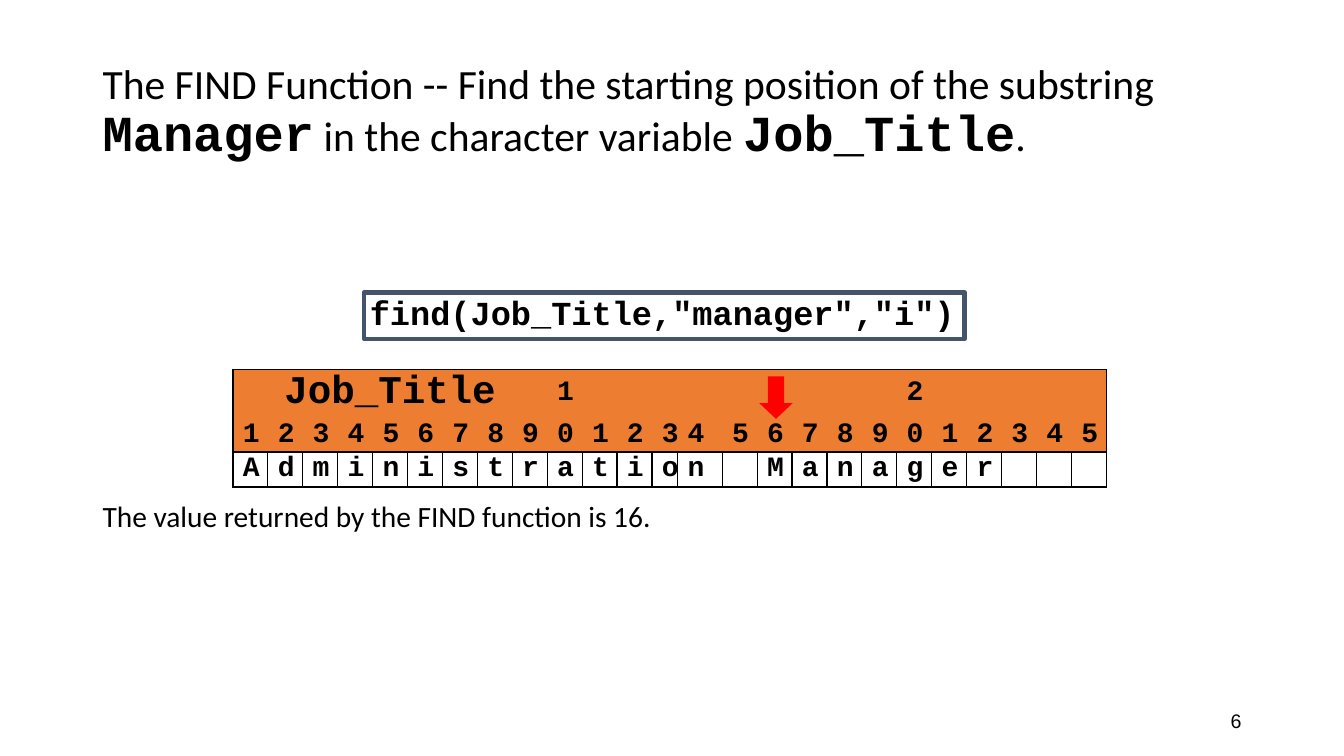
from lxml import etree
from pptx import Presentation
from pptx.dml.color import RGBColor
from pptx.enum.shapes import MSO_SHAPE
from pptx.enum.text import MSO_ANCHOR, MSO_AUTO_SIZE, PP_ALIGN
from pptx.oxml.ns import qn
from pptx.util import Cm, Pt

LEFT, CENTER, RIGHT = PP_ALIGN.LEFT, PP_ALIGN.CENTER, PP_ALIGN.RIGHT
TOP, MIDDLE = MSO_ANCHOR.TOP, MSO_ANCHOR.MIDDLE
NO_FIT, GROW = MSO_AUTO_SIZE.NONE, MSO_AUTO_SIZE.SHAPE_TO_FIT_TEXT
RECTANGLE, ARROW = MSO_SHAPE.RECTANGLE, MSO_SHAPE.RIGHT_ARROW

COLORS = {"ink": "000000", "paper": "FFFFFF", "header": "ED7D31",
          "frame": "44546A", "pointer": "FF0000"}
PROSE = {"name": "Calibri", "bold": False}
CODE = {"name": "Courier New", "bold": True}
NO_MARGINS = {"margin_left": 0, "margin_right": 0, "margin_top": 0, "margin_bottom": 0}
CELL_MARGINS = NO_MARGINS | {"margin_left": Cm(0.25), "margin_right": Cm(0.25)}

VALUE = "Administration Manager"
POSITIONS = 25
TENS = {9: "1", 19: "2"}
COLUMN_WIDTHS = {12: 0.65, 13: 1.12}
ROW_HEIGHTS = (1.19, 0.88, 0.88)


def color(key):
    """Return the named colour."""
    return RGBColor.from_string(COLORS[key])


def apply_format(target, values):
    """Set every attribute in values on the target."""
    for attribute, value in values.items():
        setattr(target, attribute, value)


def place(shape, box):
    """Move a shape to a box of left, top, width and height in centimetres."""
    apply_format(shape, dict(zip(("left", "top", "width", "height"), map(Cm, box))))


def write(paragraph, text, size, face):
    """Add a run of black text."""
    run = paragraph.add_run()
    run.text = text
    apply_format(run.font, face | {"size": Pt(size)})
    run.font.color.rgb = color("ink")


def add_heading(slide, box):
    """Fill the title with alternating prose and code."""
    heading = slide.shapes.title
    place(heading, box)
    apply_format(heading.text_frame, {"auto_size": NO_FIT, "vertical_anchor": MIDDLE})
    paragraph = heading.text_frame.paragraphs[0]
    apply_format(paragraph, {"alignment": LEFT, "line_spacing": 0.9})
    for text, size, face in (
            ("The FIND Function -- Find the starting position of the substring ", 29.7, PROSE),
            ("Manager", 36, CODE),
            (" in the character variable ", 29.7, PROSE),
            ("Job_Title", 36, CODE),
            (".", 29.7, PROSE)):
        write(paragraph, text, size, face)


def add_conclusion(slide, box):
    """Write the returned value in the body, below the table."""
    conclusion = slide.placeholders[1]
    place(conclusion, box)
    apply_format(conclusion.text_frame, {"auto_size": NO_FIT, "vertical_anchor": TOP,
                                         "margin_top": Cm(7.58)})
    paragraph = conclusion.text_frame.paragraphs[0]
    apply_format(paragraph, {"alignment": LEFT, "line_spacing": 0.9, "space_before": Pt(0)})
    properties = paragraph._p.get_or_add_pPr()
    properties.set("marL", "0")
    properties.set("indent", "0")
    etree.SubElement(properties, qn("a:buNone"))
    write(paragraph, "The value returned by the FIND function is 16.", 21, PROSE)


def add_page_number(slide, box):
    """Write the page number at the lower right."""
    page_number = slide.shapes.add_textbox(*map(Cm, box))
    apply_format(page_number.text_frame, {"word_wrap": True, "vertical_anchor": MIDDLE})
    paragraph = page_number.text_frame.paragraphs[0]
    paragraph.alignment = RIGHT
    write(paragraph, "6", 14, {"name": "Arial"})


def set_borders(cell, visible):
    """Draw the visible edges of a cell and clear the others."""
    properties = cell._tc.get_or_add_tcPr()
    for edge in ("L", "R", "T", "B"):
        line = etree.SubElement(properties, qn(f"a:ln{edge}"), w=str(Pt(1)))
        if edge in visible:
            fill = etree.SubElement(line, qn("a:solidFill"))
            etree.SubElement(fill, qn("a:srgbClr"), val=COLORS["ink"])
        else:
            etree.SubElement(line, qn("a:noFill"))


def edges_of(row, column):
    """Return the edges that carry a line at a table position."""
    if row == 2:
        return "LRTB"
    sides = {0: "L", POSITIONS - 1: "R"}.get(column, "")
    return sides + ("T", "B")[row]


def add_position_table(slide, box):
    """Show each character of the value under its position."""
    frame = slide.shapes.add_table(len(ROW_HEIGHTS), POSITIONS, *map(Cm, box))
    table = frame.table
    apply_format(table, {"first_row": False, "horz_banding": False})
    for index, column in enumerate(table.columns):
        column.width = Cm(COLUMN_WIDTHS.get(index, 0.88))
    for row, height in zip(table.rows, ROW_HEIGHTS):
        row.height = Cm(height)
    tens = [TENS.get(index, "") for index in range(POSITIONS)]
    units = [str((index + 1) % 10) for index in range(POSITIONS)]
    characters = VALUE.ljust(POSITIONS)
    for row, texts in enumerate((tens, units, characters)):
        for column, text in enumerate(texts):
            cell = table.cell(row, column)
            apply_format(cell, CELL_MARGINS | {"vertical_anchor": MIDDLE})
            set_borders(cell, edges_of(row, column))
            cell.fill.solid()
            cell.fill.fore_color.rgb = color("paper" if row == 2 else "header")
            if text.strip():
                write(cell.text_frame.paragraphs[0], text, 20, CODE)
    variable = table.cell(0, 0)
    variable.merge(table.cell(0, 8))
    apply_format(variable, NO_MARGINS)
    paragraph = variable.text_frame.paragraphs[0]
    paragraph.alignment = CENTER
    write(paragraph, "Job_Title", 28, CODE)


def add_filled_shape(slide, kind, box, fill):
    """Add a flat preset shape."""
    shape = slide.shapes.add_shape(kind, *map(Cm, box))
    shape.shadow.inherit = False
    shape.fill.solid()
    shape.fill.fore_color.rgb = color(fill)
    return shape


def add_function_call(slide, box):
    """Frame the function call."""
    call = add_filled_shape(slide, RECTANGLE, box, "paper")
    call.line.color.rgb = color("frame")
    call.line.width = Pt(3)
    apply_format(call.text_frame, dict.fromkeys(NO_MARGINS, Cm(0.15)) | {
        "word_wrap": False, "auto_size": GROW, "vertical_anchor": TOP})
    paragraph = call.text_frame.paragraphs[0]
    apply_format(paragraph, {"alignment": LEFT, "line_spacing": 0.85})
    write(paragraph, 'find(Job_Title,"manager","i")', 24, CODE)


def add_pointer(slide, box):
    """Point down at the starting position."""
    pointer = add_filled_shape(slide, ARROW, box, "pointer")
    pointer.line.fill.background()
    pointer.rotation = 90
    pointer.adjustments[0] = 0.49
    pointer.adjustments[1] = 0.47


def main():
    """Build and save the slide."""
    deck = Presentation()
    apply_format(deck, {"slide_width": Cm(33.87), "slide_height": Cm(19.05)})
    slide = deck.slides.add_slide(deck.slide_layouts[1])
    add_heading(slide, (2.33, 1.01, 29.21, 3.68))
    add_conclusion(slide, (2.33, 5.07, 29.21, 12.09))
    add_page_number(slide, (23.92, 17.65, 7.62, 1.02))
    add_position_table(slide, (5.87, 9.32, 22.01, 2.95))
    add_function_call(slide, (9.17, 7.37, 15.14, 1.17))
    add_pointer(slide, (19.02, 9.6, 1.07, 0.84))
    deck.save("out.pptx")


if __name__ == "__main__":
    main()
